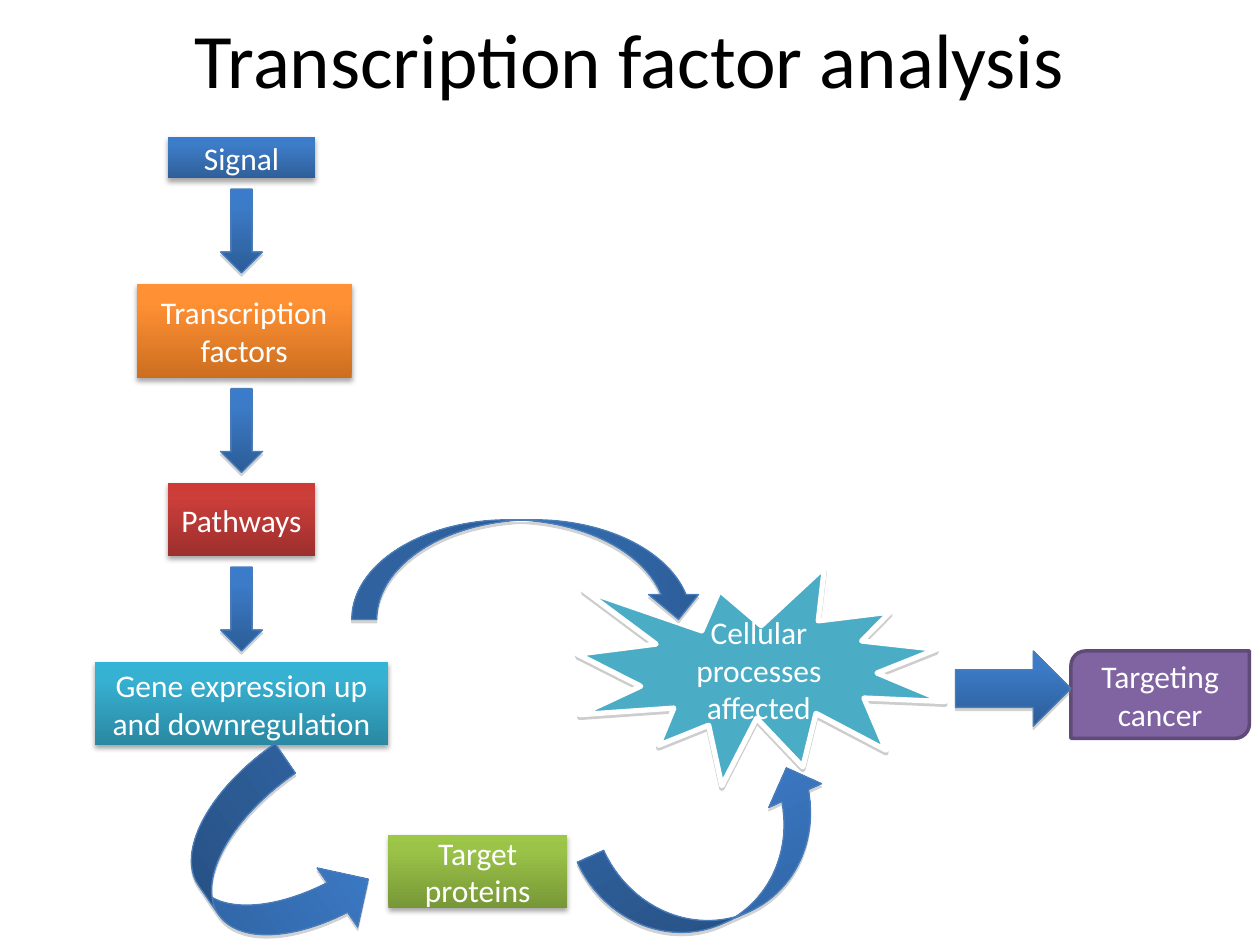
"""Build the transcription factor analysis flow slide."""
from copy import deepcopy

from lxml.etree import SubElement
from pptx import Presentation
from pptx.dml.color import RGBColor
from pptx.enum.shapes import MSO_SHAPE
from pptx.enum.text import MSO_ANCHOR, PP_ALIGN
from pptx.oxml.ns import qn
from pptx.util import Pt

BLACK = RGBColor(0x00, 0x00, 0x00)
WHITE = RGBColor(0xFF, 0xFF, 0xFF)
GRAY = RGBColor(0x80, 0x80, 0x80)
TEAL = RGBColor(0x4B, 0xAC, 0xC6)
PURPLE = RGBColor(0x80, 0x64, 0xA2)
DARK_PURPLE = RGBColor(0x5F, 0x4A, 0x78)
ARROW_LINE = RGBColor(0x4A, 0x7E, 0xBB)
ARROW_BLUES = (RGBColor(0x2C, 0x5D, 0x98), RGBColor(0x3C, 0x7B, 0xC7), RGBColor(0x3A, 0x7C, 0xCB))
BLUES = (RGBColor(0x2F, 0x5F, 0x99), RGBColor(0x3D, 0x7C, 0xC7), RGBColor(0x3A, 0x7C, 0xCB))
REDS = (RGBColor(0x9C, 0x2F, 0x2D), RGBColor(0xCB, 0x3E, 0x3A), RGBColor(0xCE, 0x3B, 0x37))
ORANGES = (RGBColor(0xCC, 0x6E, 0x20), RGBColor(0xFF, 0x90, 0x34), RGBColor(0xFF, 0x91, 0x36))
CYANS = (RGBColor(0x2A, 0x88, 0xA2), RGBColor(0x37, 0xB1, 0xD2), RGBColor(0x34, 0xB4, 0xD6))
GREENS = (RGBColor(0x77, 0x97, 0x37), RGBColor(0x9B, 0xC3, 0x48), RGBColor(0x9D, 0xC7, 0x46))


def add_filled_shape(slide, kind, bounds, colors, line=None, line_width=0.75, text=""):
    """Add a shape with a solid colour or a bottom-to-top gradient."""
    shape = slide.shapes.add_shape(kind, *[Pt(length) for length in bounds])
    shape.shadow.inherit = False
    if isinstance(colors, RGBColor):
        shape.fill.solid()
        shape.fill.fore_color.rgb = colors
    else:
        shape.fill.gradient()
        shape.fill.gradient_angle = 90
        stop_list = shape._element.spPr.find(qn("a:gradFill")).find(qn("a:gsLst"))
        stop_list.append(deepcopy(stop_list[-1]))
        for stop, position, color in zip(shape.fill.gradient_stops, (0, 0.8, 1), colors):
            stop.position = position
            stop.color.rgb = color
    if line is None:
        shape.line.fill.background()
    else:
        shape.line.color.rgb = line
        shape.line.width = Pt(line_width)
    if text:
        shape.text_frame.text = text
        paragraph = shape.text_frame.paragraphs[0]
        paragraph.alignment = PP_ALIGN.CENTER
        paragraph.font.name = "Calibri"
        paragraph.font.size = Pt(18)
        paragraph.font.color.rgb = WHITE
    return shape


def add_shadow(shape, color, opacity, blur, distance):
    """Give a shape a soft shadow that falls straight down."""
    effects = shape._element.spPr.find(qn("a:effectLst"))
    shadow = SubElement(effects, qn("a:outerShdw"), blurRad=str(Pt(blur)), dist=str(Pt(distance)),
                        dir="5400000", rotWithShape="0")
    shadow_color = SubElement(shadow, qn("a:srgbClr"), val=str(color))
    SubElement(shadow_color, qn("a:alpha"), val=str(opacity * 1000))


presentation = Presentation()
presentation.slide_width = Pt(720)
presentation.slide_height = Pt(540)
slide = presentation.slides.add_slide(presentation.slide_layouts[5])

title = slide.shapes.title
title.left, title.top, title.width, title.height = Pt(36), Pt(-12), Pt(648), Pt(90)
title.text_frame.text = "Transcription factor analysis"
title.text_frame.vertical_anchor = MSO_ANCHOR.MIDDLE
title_paragraph = title.text_frame.paragraphs[0]
title_paragraph.alignment = PP_ALIGN.CENTER
title_paragraph.font.name = "Calibri"
title_paragraph.font.size = Pt(44)
title_paragraph.font.color.rgb = BLACK

boxes = [
    ("Signal", (96, 78, 84, 24), BLUES),
    ("Pathways", (96, 276, 84, 42), REDS),
    ("Transcription factors", (78, 162, 123, 54), ORANGES),
    ("Gene expression up and downregulation", (54, 378, 168, 48), CYANS),
    ("Target proteins", (222, 477, 102, 42), GREENS),
]
for text, bounds, colors in boxes:
    box = add_filled_shape(slide, MSO_SHAPE.RECTANGLE, bounds, colors, text=text)
    add_shadow(box, BLACK, 35, 3.1, 1.8)

burst = add_filled_shape(slide, MSO_SHAPE.EXPLOSION1, (330, 324, 210, 125), TEAL, WHITE, 3,
                         "Cellular processes affected")
add_shadow(burst, GRAY, 38, 0, 1.6)
add_filled_shape(slide, MSO_SHAPE.ROUND_2_DIAG_RECTANGLE, (612, 372, 102, 50), PURPLE,
                 DARK_PURPLE, 2, "Targeting cancer")

arrows = [(MSO_SHAPE.DOWN_ARROW, (126, top, 24, 48), 0) for top in (108, 222, 324)]
arrows += [
    (MSO_SHAPE.CURVED_LEFT_ARROW, (273, 225, 57, 201), 270),
    (MSO_SHAPE.CURVED_UP_ARROW, (98.6, 454.3, 114.5, 82), 55.5),
    (MSO_SHAPE.CURVED_UP_ARROW, (337, 459.4, 147.6, 66.2), 335.7),
    (MSO_SHAPE.RIGHT_ARROW, (546, 372, 66, 43), 0),
]
for kind, bounds, rotation in arrows:
    arrow = add_filled_shape(slide, kind, bounds, ARROW_BLUES, ARROW_LINE)
    arrow.rotation = rotation
    for index, adjustment in enumerate((0.25, 0.5, 0.25) if rotation else (0.5, 0.5)):
        arrow.adjustments[index] = adjustment
    add_shadow(arrow, GRAY, 35, 0, 1.8)

presentation.save("out.pptx")
